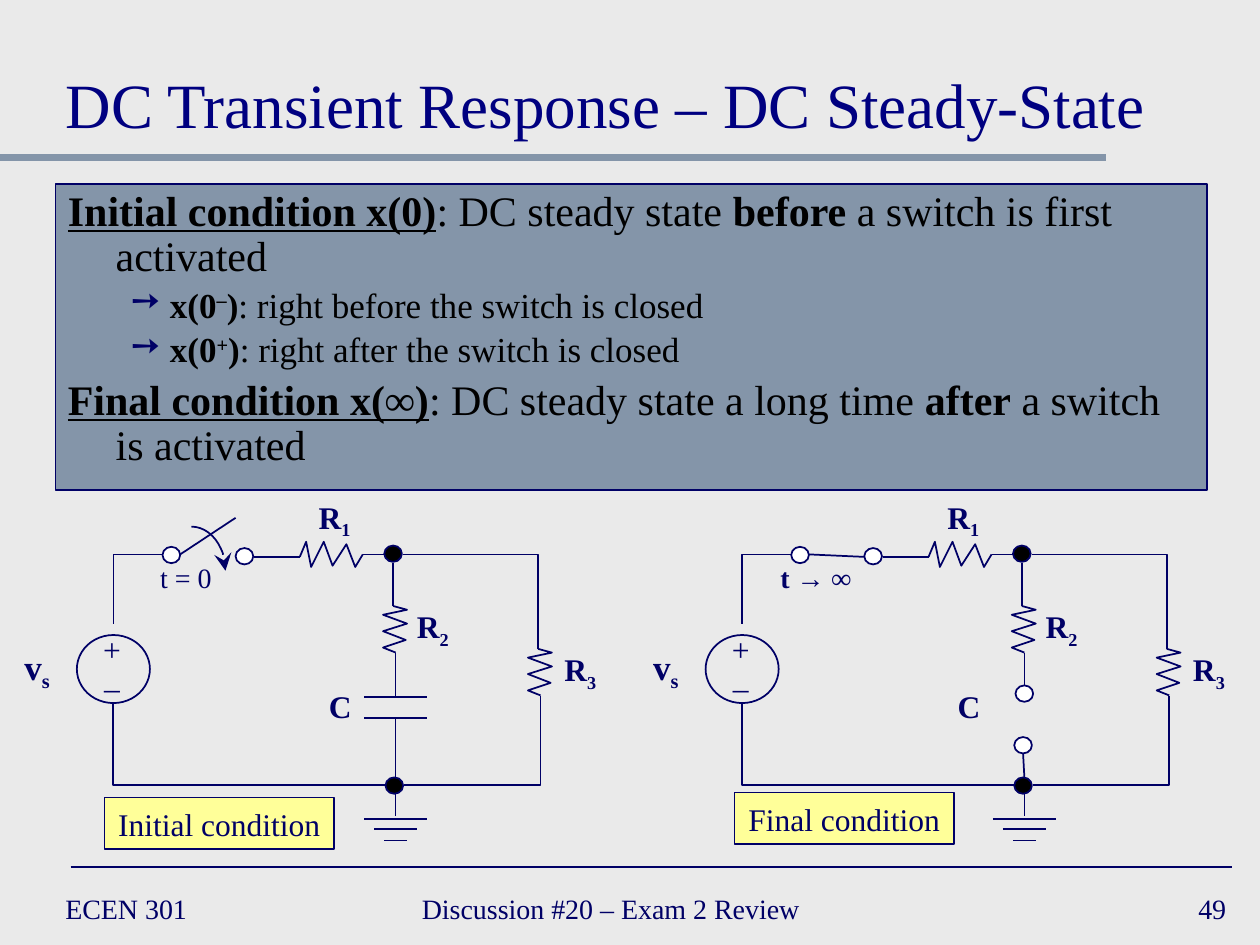
from lxml.etree import SubElement
from pptx import Presentation
from pptx.dml.color import RGBColor
from pptx.enum.shapes import MSO_CONNECTOR, MSO_SHAPE
from pptx.enum.text import MSO_ANCHOR as ANCHOR, PP_ALIGN as ALIGN
from pptx.oxml.ns import qn
from pptx.util import Inches, Pt

FONT = "Times New Roman"
NAVY, SLATE, BLACK, WHITE = "000066", "8495A9", "000000", "FFFFFF"
ZIGZAG = [(0, 0), (0.11, 0.03), (-0.08, 0.07), (0.11, 0.14), (-0.08, 0.2),
          (0.1, 0.27), (-0.08, 0.33), (0.02, 0.37)]
R1_POINTS = [(2.38, 4.42), (2.43, 4.3), (2.47, 4.5), (2.57, 4.3), (2.64, 4.49),
             (2.75, 4.32), (2.82, 4.5), (2.88, 4.4)]
CIRCUIT_STEP = 4.99


def rgb(value):
    return RGBColor.from_string(value)


def add_runs(p, runs, size, color):
    for text, style in runs:
        r = p.add_run()
        r.text = text
        r.font.name, r.font.size = FONT, Pt(size)
        r.font.color.rgb = rgb(color)
        r.font.bold = "b" in style
        r.font.underline = "u" in style
        for mark, baseline in (("^", "30000"), ("_", "-25000")):
            if mark in style:
                r._r.get_or_add_rPr().set("baseline", baseline)


def add_text(shapes, box, paragraphs, size, align=ALIGN.CENTER, wrap=False, anchor=ANCHOR.TOP):
    tf = shapes.add_textbox(*map(Inches, box)).text_frame
    tf.word_wrap, tf.vertical_anchor = wrap, anchor
    for i, runs in enumerate(paragraphs):
        p = tf.add_paragraph() if i else tf.paragraphs[0]
        p.alignment = align
        add_runs(p, runs, size, NAVY)


def add_line(shapes, start, end, color=NAVY, width=1):
    s = shapes.add_connector(MSO_CONNECTOR.STRAIGHT, *map(Inches, start + end))
    s.line.color.rgb, s.line.width = rgb(color), Pt(width)
    SubElement(s._element.spPr, qn("a:effectLst"))


def outline(s, fill=None, width=1):
    s.shadow.inherit = False
    s.line.color.rgb, s.line.width = rgb(NAVY), Pt(width)
    if fill:
        s.fill.solid()
        s.fill.fore_color.rgb = rgb(fill)
    else:
        s.fill.background()


def add_path(shapes, points):
    first, *rest = [(Inches(x), Inches(y)) for x, y in points]
    builder = shapes.build_freeform(*first)
    builder.add_line_segments(rest, close=False)
    outline(builder.convert_to_shape())


def add_shape(shapes, kind, box, fill=None, width=1):
    s = shapes.add_shape(kind, *map(Inches, box))
    outline(s, fill, width)
    return s


def add_title(slide):
    s = slide.shapes.title
    s.left, s.top, s.width, s.height = map(Inches, (0.42, 0.17, 9.17, 1))
    tf = s.text_frame
    tf.word_wrap, tf.vertical_anchor = True, ANCHOR.BOTTOM
    p = tf.paragraphs[0]
    p.alignment = ALIGN.LEFT
    add_runs(p, [("DC Transient Response – DC Steady-State", "")], 36, "000080")


def add_definitions(slide):
    items = [
        (0, [("Initial condition x(0)", "bu"), (": DC steady state ", ""),
             ("before", "b"), (" a switch is first activated", "")]),
        (1, [("x(0", "b"), ("–", "b^"), (")", "b"),
             (": right before the switch is closed", "")]),
        (1, [("x(0", "b"), ("+", "b^"), (")", "b"),
             (": right after the switch is closed", "")]),
        (0, [("Final condition x(∞)", "bu"), (": DC steady state a long time ", ""),
             ("after", "b"), (" a switch is activated", "")]),
    ]
    s = add_shape(slide.shapes, MSO_SHAPE.RECTANGLE, (0.44, 1.46, 9.14, 2.43), SLATE, 0.75)
    tf = s.text_frame
    tf.word_wrap, tf.vertical_anchor = True, ANCHOR.TOP
    for i, (level, runs) in enumerate(items):
        p = tf.add_paragraph() if i else tf.paragraphs[0]
        size, margin, indent = ((24, 0.38, -0.38), (20, 0.81, -0.31))[level]
        p.alignment, p.level, p.line_spacing = ALIGN.LEFT, level, 0.9
        p.space_before = Pt(size * 0.2 if i else 0)
        pPr = p._p.get_or_add_pPr()
        pPr.set("marL", str(Inches(margin)))
        pPr.set("indent", str(Inches(indent)))
        if level:
            SubElement(SubElement(pPr, qn("a:buClr")), qn("a:srgbClr"), val=NAVY)
            SubElement(pPr, qn("a:buChar"), char="➙")
        add_runs(p, runs, size, BLACK)


def add_node(shapes, x, y, fill):
    add_shape(shapes, MSO_SHAPE.OVAL, (x, y, 0.14, 0.13), fill)


def add_circuit(slide, dx, closed):
    shapes = slide.shapes.add_group_shape().shapes

    def path(*points):
        add_path(shapes, [(x + dx, y) for x, y in points])

    def line(x1, y1, x2, y2):
        add_line(shapes, (x1 + dx, y1), (x2 + dx, y2))

    def label(x, y, width, runs, size=18):
        add_text(shapes, (x + dx, y, width, 0.4), [runs], size)

    path((3.06, 6.23), (0.9, 6.23), (0.9, 5.58))
    path((0.9, 4.95), (0.9, 4.4), (1.29, 4.4))
    path((3.2, 4.4), (4.27, 4.4), (4.27, 5.15))
    path((3.21, 6.23), (4.29, 6.23), (4.29, 5.52))
    path(*R1_POINTS)
    for x, y in ((3.12, 4.81), (4.27, 5.15)):
        path(*[(x + a, y + b) for a, b in ZIGZAG])
    line(2.02, 4.42, 2.38, 4.42)
    line(2.88, 4.4, 3.05, 4.4)
    line(3.12, 4.47, 3.12, 4.81)
    line(3.14, 6.23, 3.14, 6.48)
    for half, y in ((0.25, 6.5), (0.17, 6.58), (0.09, 6.67)):
        line(3.14 - half, y, 3.14 + half, y)

    add_shape(shapes, MSO_SHAPE.OVAL, (0.61 + dx, 5.04, 0.58, 0.54))
    add_text(shapes, (0.72 + dx, 4.95, 0.34, 0.7), [[("+", "")], [("–", "")]], 18)
    label(0.09, 5.07, 0.41, [("v", "b"), ("s", "b_")], 20)
    for number, x, y in (("1", 2.42, 3.9), ("2", 3.2, 4.77), ("3", 4.37, 5.11)):
        label(x, y, 0.47, [("R", "b"), (number, "b_")])
    label(2.51, 5.4, 0.38, [("C", "b")])

    for x, y, fill in ((3.05, 4.33, BLACK), (3.06, 6.17, BLACK),
                       (1.29, 4.34, WHITE), (1.87, 4.35, WHITE)):
        add_node(shapes, x + dx, y, fill)

    if closed:
        line(1.43, 4.4, 1.87, 4.42)
        line(3.14, 5.18, 3.14, 5.44)
        line(3.13, 5.98, 3.14, 6.17)
        add_node(shapes, 3.07 + dx, 5.44, WHITE)
        add_node(shapes, 3.06 + dx, 5.85, WHITE)
        label(1.1, 4.4, 0.77, [("t → ∞", "b")], 16)
    else:
        line(1.43, 4.4, 1.87, 4.11)
        line(3.14, 5.18, 3.14, 5.53)
        line(3.14, 5.7, 3.14, 6.17)
        for y in (5.53, 5.7):
            line(2.89, y, 3.39, y)
        arc = add_shape(shapes, MSO_SHAPE.ARC, (1.25 + dx, 4.18, 0.54, 0.7))
        SubElement(arc.get_or_add_ln(), qn("a:tailEnd"), type="stealth", w="lg", len="lg")
        label(1.17, 4.4, 0.61, [("t = 0", "")], 16)


def add_caption(slide, box, text):
    tf = add_shape(slide.shapes, MSO_SHAPE.RECTANGLE, box, "FFFF99").text_frame
    tf.word_wrap = False
    p = tf.paragraphs[0]
    p.alignment = ALIGN.CENTER
    add_runs(p, [(text, "")], 18, NAVY)


def add_footer(slide):
    for x, width, text, align in (
        (0.42, 2.17, "ECEN 301", ALIGN.LEFT),
        (3.25, 3.83, "Discussion #20 – Exam 2 Review", ALIGN.LEFT),
        (7.75, 2.08, "49", ALIGN.RIGHT),
    ):
        add_text(slide.shapes, (x, 7, width, 0.42), [[(text, "")]], 16, align, True, ANCHOR.MIDDLE)


def main():
    prs = Presentation()
    prs.slide_width, prs.slide_height = Inches(10), Inches(7.5)
    slide = prs.slides.add_slide(prs.slide_layouts[5])
    slide.background.fill.solid()
    slide.background.fill.fore_color.rgb = rgb("EAEAEA")
    add_line(slide.shapes, (0, 1.25), (8.78, 1.25), SLATE, 4)
    add_line(slide.shapes, (0.56, 6.88), (9.78, 6.88))
    add_title(slide)
    add_definitions(slide)
    add_circuit(slide, 0, closed=False)
    add_circuit(slide, CIRCUIT_STEP, closed=True)
    add_caption(slide, (0.83, 6.33, 1.82, 0.41), "Initial condition")
    add_caption(slide, (5.83, 6.29, 1.74, 0.41), "Final condition")
    add_footer(slide)
    prs.save("out.pptx")


if __name__ == "__main__":
    main()
